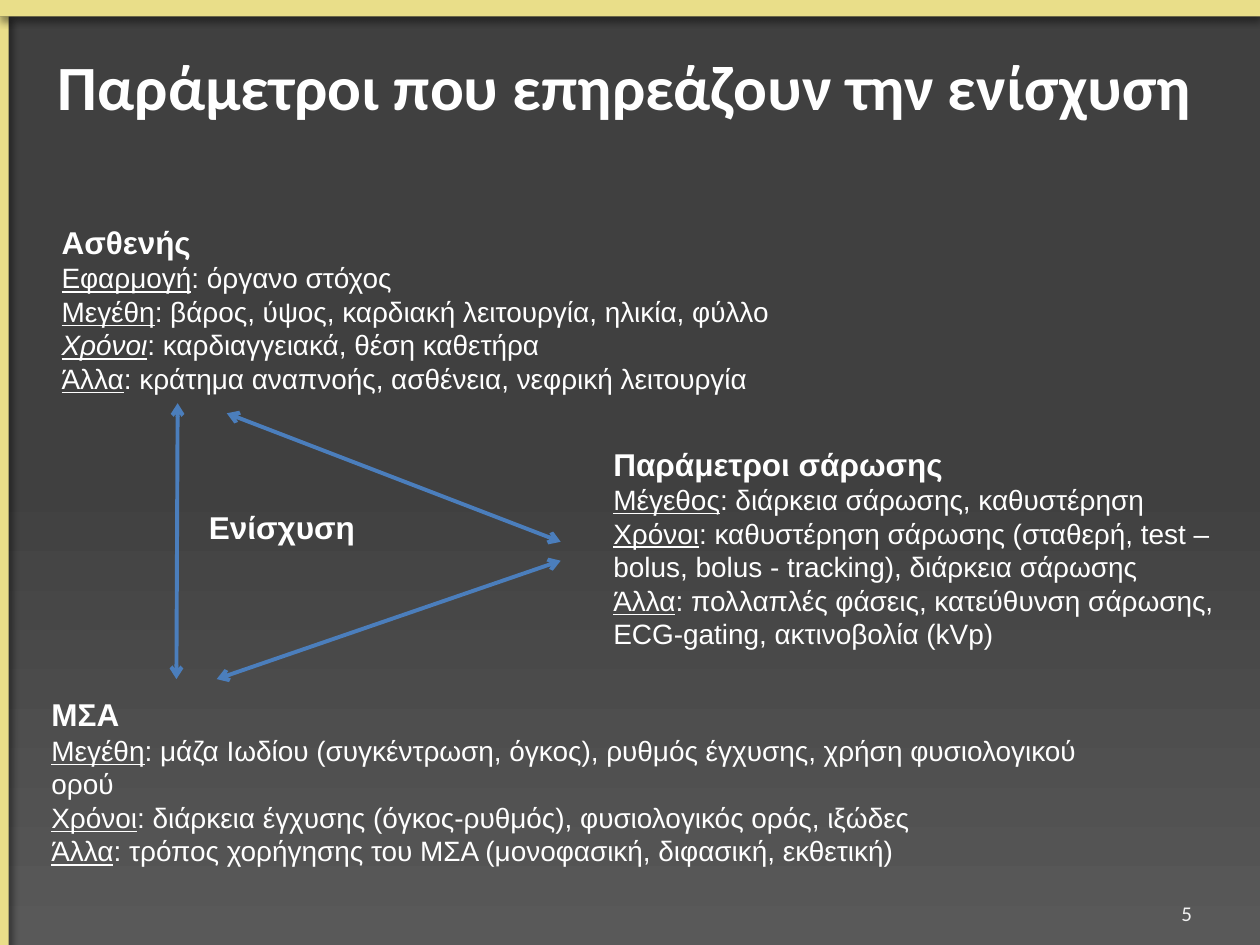
from lxml import etree
from pptx import Presentation
from pptx.dml.color import RGBColor
from pptx.enum.shapes import MSO_CONNECTOR, MSO_SHAPE
from pptx.enum.text import MSO_ANCHOR, MSO_AUTO_SIZE, PP_ALIGN
from pptx.oxml.ns import qn
from pptx.util import Emu, Pt

PX = 9144  # 100 px to the inch
WIDTH, HEIGHT = 1000, 750
BAR = 13

WHITE = RGBColor(0xFF, 0xFF, 0xFF)
PALE = RGBColor(0xF2, 0xF2, 0xF2)
SAND = RGBColor(0xE9, 0xDE, 0x89)
BLUE = RGBColor(0x4B, 0x7E, 0xBC)
CHARCOAL = RGBColor(0x40, 0x40, 0x40)
GREY = RGBColor(0x59, 0x59, 0x59)

RECTANGLE = MSO_SHAPE.RECTANGLE
STRAIGHT = MSO_CONNECTOR.STRAIGHT
MIDDLE = MSO_ANCHOR.MIDDLE
LEFT, RIGHT = PP_ALIGN.LEFT, PP_ALIGN.RIGHT
FIT_SHAPE, NO_FIT = MSO_AUTO_SIZE.SHAPE_TO_FIT_TEXT, MSO_AUTO_SIZE.NONE


def px(*lengths):
    return [Emu(length * PX) for length in lengths]


class Deck:
    """Style of the slide and the elements placed on it."""

    heading_font, body_font = "Calibri", "Arial"

    def __init__(self):
        self.prs = Presentation()
        self.prs.slide_width, self.prs.slide_height = px(WIDTH, HEIGHT)
        self.slide = self.prs.slides.add_slide(self.prs.slide_layouts[5])

    def style(self, run, size, font=body_font, color=WHITE, bold=False,
              italic=False, underline=False):
        run.font.name, run.font.size = font, Pt(size)
        run.font.color.rgb = color
        run.font.bold, run.font.italic = bold, italic
        run.font.underline = underline

    def background(self, top, bottom):
        fill = self.slide.background.fill
        fill.gradient()
        fill.gradient_angle = 270
        for stop, position, color in zip(fill.gradient_stops, (0.5, 1), (top, bottom)):
            stop.position, stop.color.rgb = position, color

    def bar(self, box, shadow_angle):
        bar = self.slide.shapes.add_shape(RECTANGLE, *px(*box))
        bar.fill.solid()
        bar.fill.fore_color.rgb = SAND
        bar.line.fill.background()
        bar.shadow.inherit = False
        effects = bar._element.spPr.find(qn("a:effectLst"))
        shadow = etree.SubElement(
            effects, qn("a:outerShdw"), blurRad=str(Pt(4)), dist=str(Pt(3)),
            dir=str(shadow_angle * 60000), algn="tl", rotWithShape="0")
        color = etree.SubElement(shadow, qn("a:srgbClr"), val="000000")
        etree.SubElement(color, qn("a:alpha"), val="40000")

    def title(self, text, box, indent):
        title = self.slide.shapes.title
        title.left, title.top, title.width, title.height = px(*box)
        frame = title.text_frame
        frame.text = text
        frame.vertical_anchor, frame.auto_size = MIDDLE, NO_FIT
        paragraph = frame.paragraphs[0]
        paragraph.alignment = LEFT
        properties = paragraph._p.get_or_add_pPr()
        properties.set("marL", str(indent * PX))
        properties.set("indent", "0")
        self.style(paragraph.runs[0], 36, self.heading_font, bold=True)

    def text_box(self, text, box):
        frame = self.slide.shapes.add_textbox(*px(*box)).text_frame
        frame.word_wrap = True
        frame.text = text
        return frame

    def group(self, heading, box, factors=(), italic_label=None):
        """A bold heading over lines of 'underlined label: values'."""
        frame = self.text_box(heading, box)
        frame.auto_size = FIT_SHAPE
        self.style(frame.paragraphs[0].runs[0], 18, bold=True)
        for label, values in factors:
            paragraph = frame.add_paragraph()
            paragraph.text = label
            self.style(paragraph.runs[0], 16, underline=True,
                       italic=label == italic_label)
            rest = paragraph.add_run()
            rest.text = f": {values}"
            self.style(rest, 16)

    def page_number(self, number, box):
        frame = self.text_box(number, box)
        frame.vertical_anchor = MIDDLE
        frame.paragraphs[0].alignment = RIGHT
        self.style(frame.paragraphs[0].runs[0], 12, self.heading_font, PALE)

    def double_arrow(self, start, end):
        arrow = self.slide.shapes.add_connector(STRAIGHT, *px(*start, *end))
        arrow.line.color.rgb, arrow.line.width = BLUE, Pt(2.25)
        line = arrow.line._get_or_add_ln()
        for tip in ("a:headEnd", "a:tailEnd"):
            etree.SubElement(line, qn(tip), type="arrow")
        etree.SubElement(arrow._element.spPr, qn("a:effectLst"))


def main():
    deck = Deck()

    # Backdrop and edge bars
    deck.background(CHARCOAL, GREY)
    deck.bar((0, BAR, 7, HEIGHT - BAR), 45)
    deck.bar((0, 0, WIDTH, BAR), 90)

    deck.title("Παράμετροι που επηρεάζουν την ενίσχυση",
               (7, BAR, WIDTH - 7, 110), indent=29)

    # The three groups of factors
    deck.group("Ασθενής", (39, 172, 672, 148), [
        ("Εφαρμογή", "όργανο στόχος"),
        ("Μεγέθη", "βάρος, ύψος, καρδιακή λειτουργία, ηλικία, φύλλο"),
        ("Χρόνοι", "καρδιαγγειακά, θέση καθετήρα"),
        ("Άλλα", "κράτημα αναπνοής, ασθένεια, νεφρική λειτουργία"),
    ], italic_label="Χρόνοι")
    deck.group("Παράμετροι σάρωσης", (477, 348, 523, 175), [
        ("Μέγεθος", "διάρκεια σάρωσης, καθυστέρηση"),
        ("Χρόνοι", "καθυστέρηση σάρωσης (σταθερή, test – bolus, "
                   "bolus - tracking), διάρκεια σάρωσης"),
        ("Άλλα", "πολλαπλές φάσεις, κατεύθυνση σάρωσης, "
                 "ECG-gating, ακτινοβολία (kVp)"),
    ])
    deck.group("ΜΣΑ", (31, 547, 867, 148), [
        ("Μεγέθη", "μάζα Ιωδίου (συγκέντρωση, όγκος), ρυθμός έγχυσης, "
                   "χρήση φυσιολογικού ορού"),
        ("Χρόνοι", "διάρκεια έγχυσης (όγκος-ρυθμός), "
                   "φυσιολογικός oρός, ιξώδες"),
        ("Άλλα", "τρόπος χορήγησης του ΜΣΑ (μονοφασική, διφασική, εκθετική)"),
    ])

    # Enhancement, inside the triangle of arrows
    deck.group("Ενίσχυση", (156, 398, 164, 40))
    deck.double_arrow((141, 320), (140, 539))
    deck.double_arrow((445, 445), (172, 539))
    deck.double_arrow((180, 328), (445, 430))

    deck.page_number("5", (723, 705, 233, 40))
    deck.prs.save("out.pptx")


if __name__ == "__main__":
    main()
